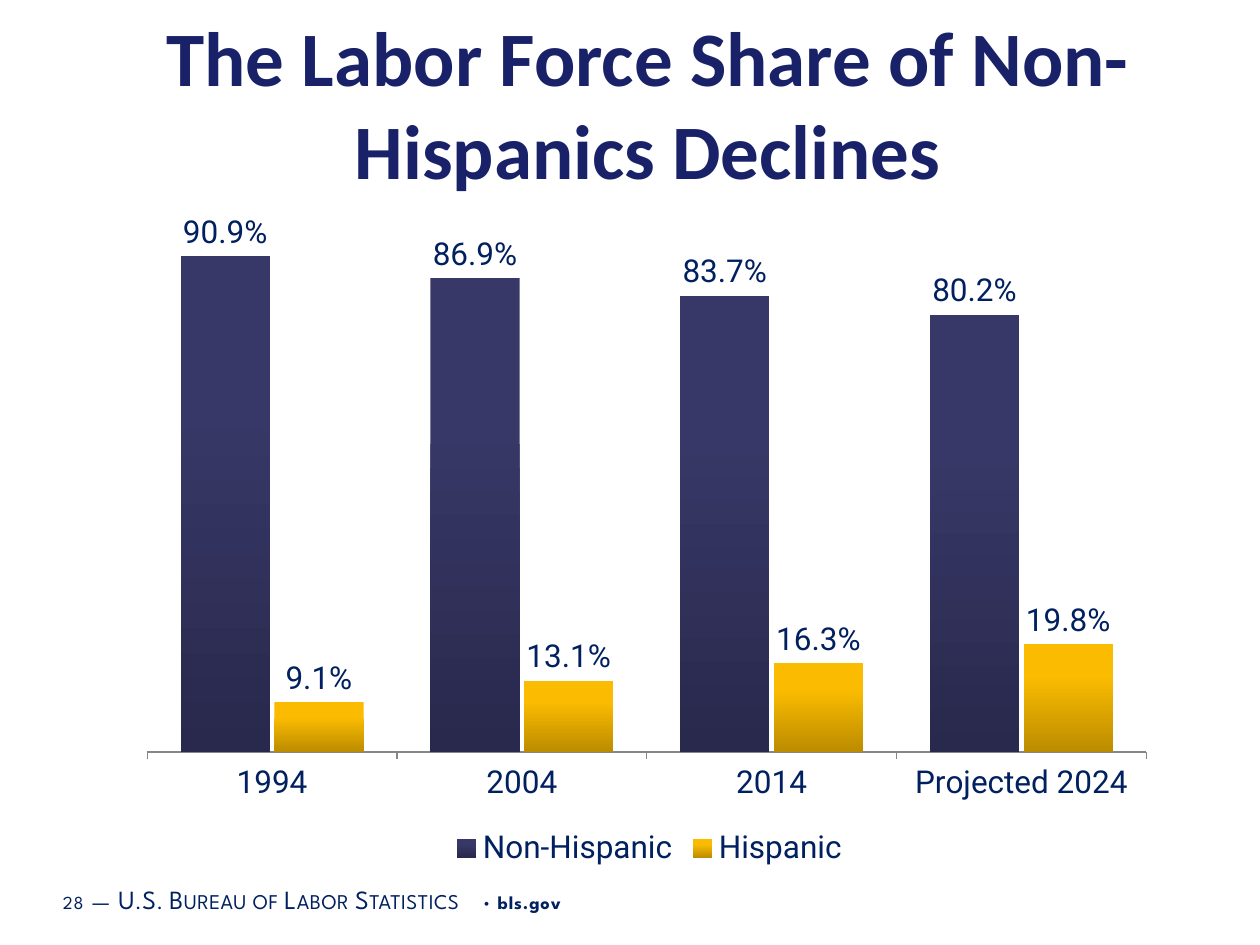
import pptx
import pptx.util
import pptx.chart.data
import pptx.dml.color
import pptx.enum.chart
import pptx.enum.text
import pptx.oxml
import pptx.oxml.ns

Inches, Pt = pptx.util.Inches, pptx.util.Pt
enums = pptx.enum.chart

THEME = {
    "head": "192168", "text": "002060", "axis": "868686",
    "bars": [("383868", "29294D"), ("FABB00", "BC8C00")],
    "head_font": "Calibri", "foot_font": "League Spartan", "font": "Roboto",
    "head_size": 44, "size": 18, "foot_size": 10.5,
}

TITLE = "The Labor Force Share of Non-Hispanics Declines"
YEARS = ["1994", "2004", "2014", "Projected 2024"]
SHARES = {
    "Non-Hispanic": [0.909, 0.869, 0.837, 0.802],
    "Hispanic": [0.091, 0.131, 0.163, 0.198],
}
SMALL = {"size": 15, "gap": 30, "caps": True}
FOOTER = [
    ("28", {}),
    (" ", {"size": 16}),
    ("—", SMALL),
    (" ", {"size": 16}),
    ("U.S. Bureau of Labor Statistics", SMALL),
    (" • ", {}),
    ("bls.gov", {"bold": True}),
]
PLOT = {"x": 0.037, "y": 0.042, "w": 0.921, "h": 0.784}


def color(name):
    return pptx.dml.color.RGBColor.from_string(name)


def style(font, size=THEME["size"], face=THEME["font"], tone=THEME["text"], bold=False):
    font.size, font.name, font.bold = Pt(size), face, bold
    font.color.rgb = color(tone)


def write(para, text, gap=0, caps=False, **form):
    run = para.add_run()
    run.text = text
    style(run.font, **form)
    props = run._r.get_or_add_rPr()
    if gap:
        props.set("spc", str(gap))
    if caps:
        props.set("cap", "small")


def place(shape, left, top, width, height):
    shape.left, shape.top = Inches(left), Inches(top)
    shape.width, shape.height = Inches(width), Inches(height)


def add_title(slide):
    title = slide.shapes.title
    place(title, 0.82, 0, 8.65, 1.62)
    frame = title.text_frame
    frame.word_wrap = True
    frame.vertical_anchor = pptx.enum.text.MSO_ANCHOR.MIDDLE
    para = frame.paragraphs[0]
    para.alignment = pptx.enum.text.PP_ALIGN.CENTER
    write(para, TITLE, size=THEME["head_size"], face=THEME["head_font"],
          tone=THEME["head"], bold=True)


def add_footer(slide):
    box = slide.shapes.add_textbox(Inches(0.43), Inches(6.93), Inches(6.33), Inches(0.4))
    frame = box.text_frame
    frame.word_wrap = True
    frame.vertical_anchor = pptx.enum.text.MSO_ANCHOR.MIDDLE
    frame.margin_left = frame.margin_right = Inches(0.07)
    frame.margin_top = frame.margin_bottom = Inches(0.04)
    base = {"size": THEME["foot_size"], "face": THEME["foot_font"], "gap": 50}
    for text, form in FOOTER:
        write(frame.paragraphs[0], text, **{**base, **form})


def set_plot(chart):
    area = chart._chartSpace.chart.plotArea
    for old in area.findall(pptx.oxml.ns.qn("c:layout")):
        area.remove(old)
    parts = "".join(f'<c:{key}Mode val="edge"/>' for key in "xy")
    parts += "".join(f'<c:{key} val="{val}"/>' for key, val in PLOT.items())
    area.insert(0, pptx.oxml.parse_xml(
        f'<c:layout {pptx.oxml.ns.nsdecls("c")}><c:manualLayout>'
        f'<c:layoutTarget val="inner"/>{parts}</c:manualLayout></c:layout>'))


def shade(series, tones):
    fill = series.format.fill
    fill.gradient()
    fill.gradient_angle = 270
    for stop, tone, spot in zip(fill.gradient_stops, tones, (0.3, 1)):
        stop.color.rgb = color(tone)
        stop.position = spot
    series.format.line.fill.background()
    series.invert_if_negative = False


def add_chart(slide):
    data = pptx.chart.data.CategoryChartData(number_format="0.0%")
    data.categories = YEARS
    for name, shares in SHARES.items():
        data.add_series(name, shares)
    chart = slide.shapes.add_chart(
        enums.XL_CHART_TYPE.COLUMN_CLUSTERED, Inches(0.85), Inches(1.41),
        Inches(8.61), Inches(5.52), data).chart
    style(chart.font)
    chart.has_title = False
    chart.has_legend = True
    chart.legend.position = enums.XL_LEGEND_POSITION.BOTTOM
    chart.legend.include_in_layout = False
    style(chart.legend.font)

    years, shares = chart.category_axis, chart.value_axis
    years.major_tick_mark = enums.XL_TICK_MARK.OUTSIDE
    years.format.line.color.rgb = color(THEME["axis"])
    years.format.line.width = Pt(0.75)
    style(years.tick_labels.font)
    shares.minimum_scale, shares.maximum_scale = 0, 1
    shares.has_major_gridlines = False
    shares.visible = False

    plot = chart.plots[0]
    plot.gap_width, plot.overlap = 75, -5
    plot.vary_by_categories = False
    for series, tones in zip(plot.series, THEME["bars"]):
        shade(series, tones)
        labels = series.data_labels
        labels.show_value = True
        labels.number_format = "0.0%"
        labels.number_format_is_linked = False
        labels.position = enums.XL_LABEL_POSITION.OUTSIDE_END
        style(labels.font)
    set_plot(chart)


def main():
    deck = pptx.Presentation()
    deck.slide_width, deck.slide_height = Inches(10), Inches(7.5)
    slide = deck.slides.add_slide(deck.slide_layouts[5])
    add_footer(slide)
    add_title(slide)
    add_chart(slide)
    deck.save("out.pptx")


if __name__ == "__main__":
    main()
